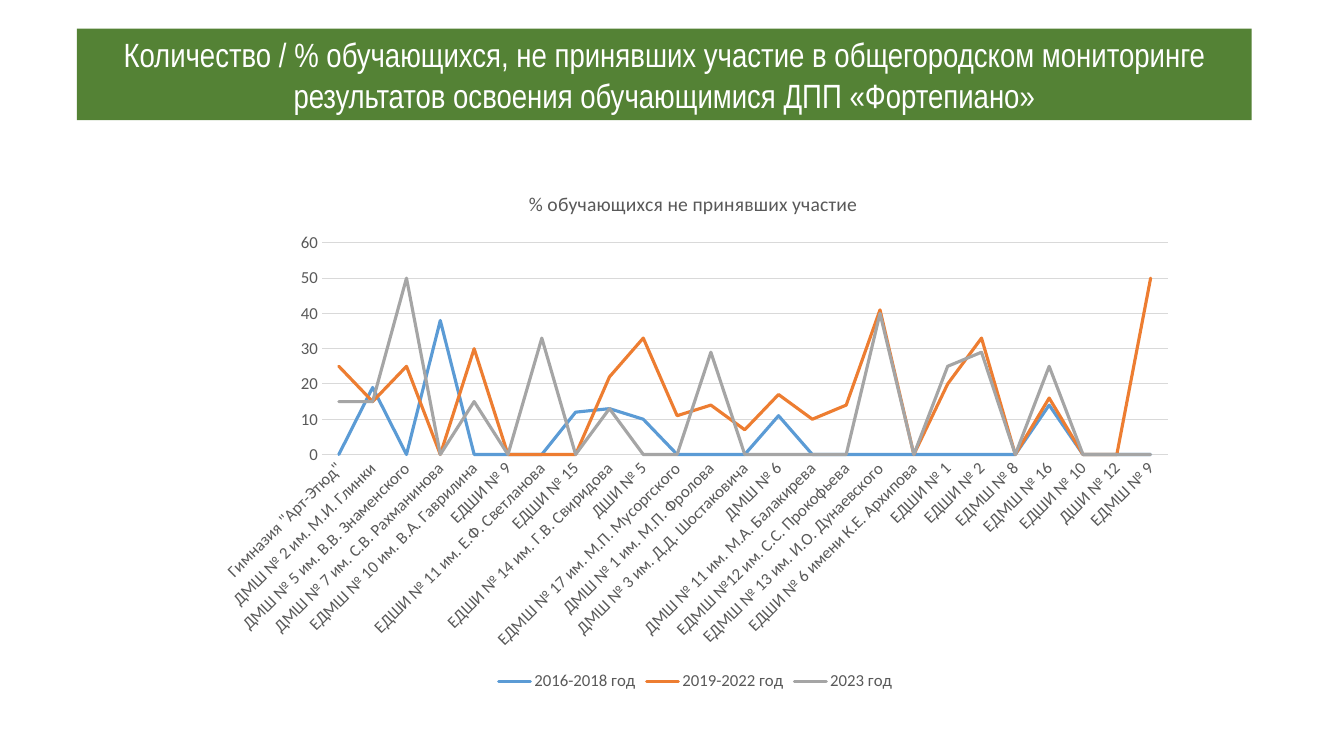
"""Build the slide on pupils who missed the citywide piano monitoring."""
from pptx import Presentation
from pptx.chart.data import CategoryChartData
from pptx.dml.color import RGBColor
from pptx.enum.chart import XL_CHART_TYPE, XL_LEGEND_POSITION, XL_MARKER_STYLE, XL_TICK_MARK
from pptx.enum.text import MSO_ANCHOR, MSO_AUTO_SIZE, PP_ALIGN
from pptx.util import Cm, Pt

GREEN = RGBColor(0x54, 0x82, 0x35)
WHITE = RGBColor(0xFF, 0xFF, 0xFF)
TEXT_GREY = RGBColor(0x59, 0x59, 0x59)
LINE_GREY = RGBColor(0xD9, 0xD9, 0xD9)
BLUE = RGBColor(0x5B, 0x9B, 0xD5)
ORANGE = RGBColor(0xED, 0x7D, 0x31)
GREY = RGBColor(0xA5, 0xA5, 0xA5)

AUTOMATIC_ROTATION = "-60000000"

TITLE_LINES = [
    "Количество / % обучающихся, не принявших участие в общегородском мониторинге",
    "результатов освоения обучающимися ДПП «Фортепиано»",
]
CHART_TITLE = "% обучающихся не принявших участие "
PERIODS = [("2016-2018 год", BLUE), ("2019-2022 год", ORANGE), ("2023 год", GREY)]
SCHOOLS = [
    ('Гимназия "Арт-Этюд"', 0, 25, 15),
    ("ДМШ № 2 им. М.И. Глинки", 19, 15, 15),
    ("ДМШ № 5 им. В.В. Знаменского", 0, 25, 50),
    ("ДМШ № 7 им. С.В. Рахманинова", 38, 0, 0),
    ("ЕДМШ № 10 им. В.А. Гаврилина", 0, 30, 15),
    ("ЕДШИ № 9", 0, 0, 0),
    ("ЕДШИ № 11 им. Е.Ф. Светланова", 0, 0, 33),
    ("ЕДШИ № 15", 12, 0, 0),
    ("ЕДШИ № 14 им. Г.В. Свиридова", 13, 22, 13),
    ("ДШИ № 5", 10, 33, 0),
    ("ЕДМШ № 17 им. М.П. Мусоргского", 0, 11, 0),
    ("ДМШ № 1 им. М.П. Фролова", 0, 14, 29),
    ("ДМШ № 3 им. Д.Д. Шостаковича", 0, 7, 0),
    ("ДМШ № 6", 11, 17, 0),
    ("ДМШ № 11 им. М.А. Балакирева", 0, 10, 0),
    ("ЕДМШ №12 им. С.С. Прокофьева", 0, 14, 0),
    ("ЕДМШ № 13 им. И.О. Дунаевского", 0, 41, 40),
    ("ЕДШИ № 6 имени К.Е. Архипова", 0, 0, 0),
    ("ЕДШИ № 1", 0, 20, 25),
    ("ЕДШИ № 2", 0, 33, 29),
    ("ЕДМШ № 8", 0, 0, 0),
    ("ЕДМШ № 16", 14, 16, 25),
    ("ЕДШИ № 10", 0, 0, 0),
    ("ДШИ № 12", 0, 0, 0),
    ("ЕДМШ № 9", 0, 50, 0),
]


def style_font(font, name, size, color):
    font.name = name
    font.size = Pt(size)
    font.bold = False
    font.color.rgb = color


def style_line(line, color, width):
    line.color.rgb = color
    line.width = Pt(width)


def add_title(slide):
    title = slide.shapes.title
    title.left, title.top, title.width, title.height = Cm(1.94), Cm(0.72), Cm(29.6), Cm(2.31)
    title.fill.solid()
    title.fill.fore_color.rgb = GREEN
    frame = title.text_frame
    frame.word_wrap = True
    frame.auto_size = MSO_AUTO_SIZE.NONE
    frame.vertical_anchor = MSO_ANCHOR.MIDDLE
    for index, line in enumerate(TITLE_LINES):
        paragraph = frame.add_paragraph() if index else frame.paragraphs[0]
        paragraph.alignment = PP_ALIGN.CENTER
        run = paragraph.add_run()
        run.text = line
        style_font(run.font, "Arial Narrow", 24, WHITE)


def add_participation_chart(slide):
    names, *columns = zip(*SCHOOLS)
    data = CategoryChartData()
    data.categories = names
    for (period, _), values in zip(PERIODS, columns):
        data.add_series(period, values)
    chart = slide.shapes.add_chart(
        XL_CHART_TYPE.LINE, Cm(5.13), Cm(4.3), Cm(24.79), Cm(13.22), data).chart
    style_font(chart.font, "Calibri", 12, TEXT_GREY)

    run = chart.chart_title.text_frame.paragraphs[0].add_run()
    run.text = CHART_TITLE
    style_font(run.font, "Calibri", 14, TEXT_GREY)
    chart.chart_title.include_in_layout = False

    chart.has_legend = True
    chart.legend.position = XL_LEGEND_POSITION.BOTTOM
    chart.legend.include_in_layout = False
    style_font(chart.legend.font, "Calibri", 12, TEXT_GREY)

    for axis in (chart.category_axis, chart.value_axis):
        axis.major_tick_mark = axis.minor_tick_mark = XL_TICK_MARK.NONE
        style_font(axis.tick_labels.font, "Calibri", 12, TEXT_GREY)
        axis._element.txPr.bodyPr.set("rot", AUTOMATIC_ROTATION)
    style_line(chart.category_axis.format.line, LINE_GREY, 0.75)

    value_axis = chart.value_axis
    value_axis.minimum_scale, value_axis.maximum_scale, value_axis.major_unit = 0, 60, 10
    value_axis.format.line.fill.background()
    style_line(value_axis.major_gridlines.format.line, LINE_GREY, 0.75)

    chart.plots[0].vary_by_categories = False
    for series, (_, color) in zip(chart.plots[0].series, PERIODS):
        series.smooth = False
        series.marker.style = XL_MARKER_STYLE.NONE
        style_line(series.format.line, color, 2.25)
        series._element.spPr.ln.set("cap", "rnd")


def main():
    presentation = Presentation()
    presentation.slide_width, presentation.slide_height = Cm(33.87), Cm(19.05)
    slide = presentation.slides.add_slide(presentation.slide_layouts[5])
    add_title(slide)
    add_participation_chart(slide)
    presentation.save("out.pptx")


if __name__ == "__main__":
    main()
